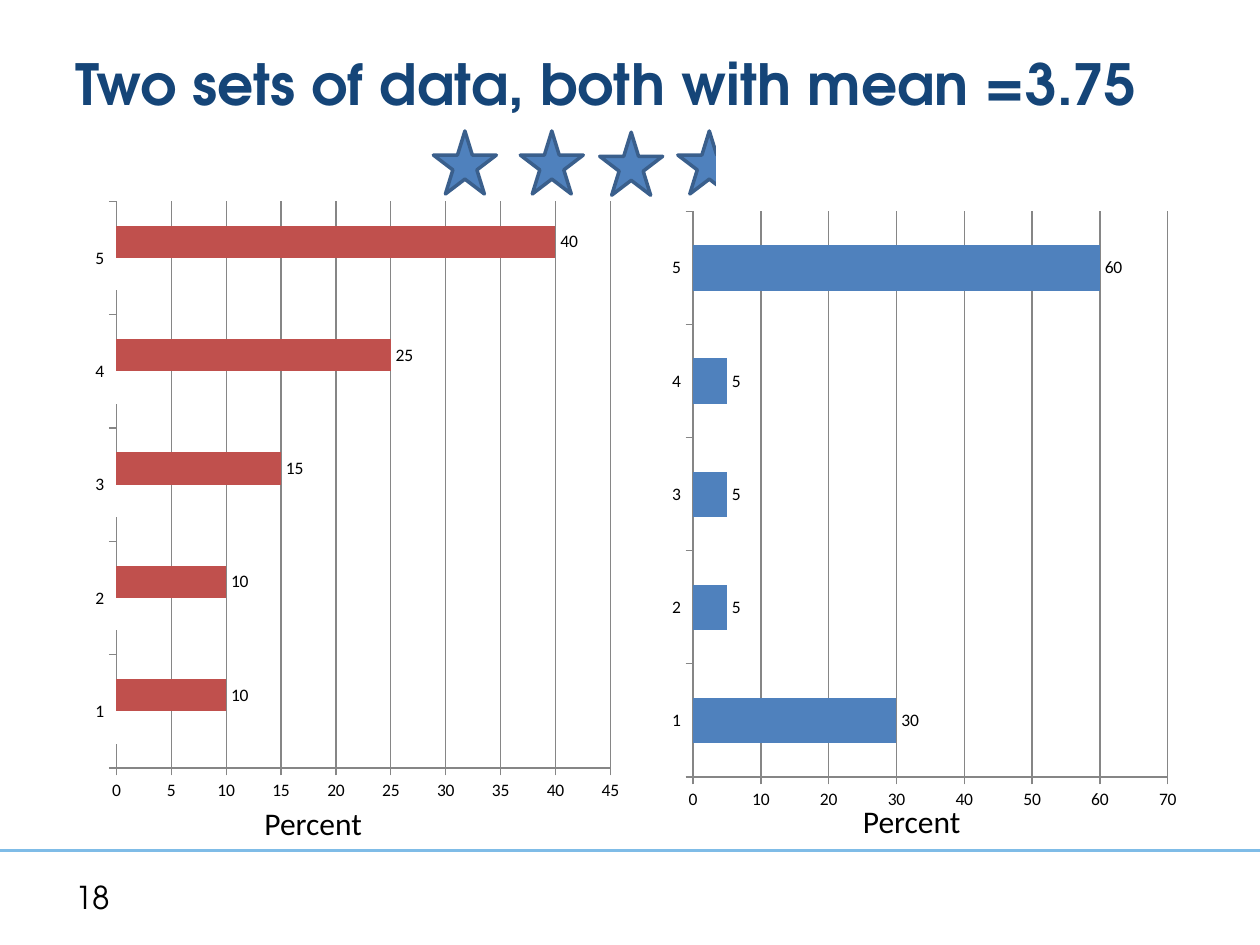
from dataclasses import dataclass

from lxml import etree
from pptx import Presentation
from pptx.chart.data import CategoryChartData
from pptx.dml.color import RGBColor
from pptx.enum import chart as ch, shapes as shp, text as txt
from pptx.oxml.ns import qn
from pptx.util import Inches, Pt

BLACK, WHITE, GRAY = "000000", "FFFFFF", "868686"
NAVY, SKY, BLUE, RED = "154578", "7FBCE7", "4F81BD", "C0504D"
STAR_EDGE = "3A5F8C"
HEADING, BODY = "TeX Gyre Adventor", "Calibri"


@dataclass
class Series:
    name: str
    values: tuple
    color: str
    labelled: bool = True


@dataclass
class RatingChart:
    box: tuple
    maximum: int
    step: int
    series: list


def rgb(color: str) -> RGBColor:
    return RGBColor.from_string(color)


def style_font(font, size: float, name: str = BODY, color: str = BLACK, bold: bool = False):
    font.size, font.name, font.bold = Pt(size), name, bold
    font.color.rgb = rgb(color)


def write(shape, text: str, *, size=18, name=BODY, color=BLACK, bold=False,
          anchor=txt.MSO_ANCHOR.TOP, bottom=0.05):
    frame = shape.text_frame
    frame.word_wrap = True
    frame.auto_size = txt.MSO_AUTO_SIZE.NONE
    frame.vertical_anchor = anchor
    frame.margin_bottom = Inches(bottom)
    paragraph = frame.paragraphs[0]
    paragraph.alignment = txt.PP_ALIGN.LEFT
    run = paragraph.add_run()
    run.text = text
    style_font(run.font, size, name, color, bold)


def add_label(slide, box: tuple, text: str, **style):
    write(slide.shapes.add_textbox(*map(Inches, box)), text, **style)


def add_block(slide, kind, left: float, top: float, fill: str, edge: str):
    block = slide.shapes.add_shape(kind, *map(Inches, (left, top, 0.5, 0.5)))
    block.shadow.inherit = False
    block.fill.solid()
    block.fill.fore_color.rgb = rgb(fill)
    block.line.color.rgb = rgb(edge)
    block.line.width = Pt(2)


def style_line(line):
    line.color.rgb = rgb(GRAY)
    line.width = Pt(0.75)


def add_rating_chart(slide, spec_: RatingChart):
    data = CategoryChartData()
    data.categories = ["1", "2", "3", "4", "5"]
    for item in spec_.series:
        data.add_series(item.name, item.values)
    chart = slide.shapes.add_chart(
        ch.XL_CHART_TYPE.BAR_CLUSTERED, *map(Inches, spec_.box), data).chart
    chart.has_legend = chart.has_title = False
    style_font(chart.font, 10)

    percent_axis = chart.value_axis
    percent_axis.minimum_scale, percent_axis.maximum_scale = 0, spec_.maximum
    percent_axis.major_unit = spec_.step
    percent_axis.has_major_gridlines = True
    style_line(percent_axis.major_gridlines.format.line)
    for axis in (chart.category_axis, percent_axis):
        axis.major_tick_mark = ch.XL_TICK_MARK.OUTSIDE
        style_line(axis.format.line)

    plot = chart.plots[0]
    plot.gap_width = 150
    plot.vary_by_categories = False
    for bars, item in zip(plot.series, spec_.series):
        bars.format.fill.solid()
        bars.format.fill.fore_color.rgb = rgb(item.color)
        bars.invert_if_negative = False
        if item.labelled:
            labels = bars.data_labels
            labels.show_value = True
            labels.position = ch.XL_LABEL_POSITION.OUTSIDE_END
            style_font(labels.font, 10)


def main():
    deck = Presentation()
    deck.slide_width, deck.slide_height = Inches(10), Inches(7.5)
    slide = deck.slides.add_slide(deck.slide_layouts[5])

    # Footer rule
    rule = slide.shapes.add_connector(
        shp.MSO_CONNECTOR.STRAIGHT, *map(Inches, (0, 6.75, 10, 6.75)))
    rule.line.color.rgb = rgb(SKY)
    rule.line.width = Pt(1.5)
    etree.SubElement(rule.line._get_or_add_ln().getparent(), qn("a:effectLst"))

    # Title, raised above the stars by its bottom margin
    title = slide.shapes.title
    title.left, title.top, title.width, title.height = map(Inches, (0.5, 0.3, 9, 1.25))
    write(title, "Two sets of data, both with mean =3.75", size=32.4, name=HEADING,
          color=NAVY, bold=True, anchor=txt.MSO_ANCHOR.MIDDLE, bottom=0.58)

    # Page number
    add_label(slide, (0.5, 6.92, 2.33, 0.4), "18", name=HEADING,
              anchor=txt.MSO_ANCHOR.MIDDLE)

    # Two distributions with the same mean; white bars leave the lower half blank
    spread = RatingChart((0.67, 1.5, 4.33, 4.95), 45, 5, [
        Series("Series 1", (5, 4, 3, 2, 1), WHITE, labelled=False),
        Series("Series 2", (10, 10, 15, 25, 40), RED)])
    polarised = RatingChart((5.25, 1.58, 4.17, 4.94), 70, 10, [
        Series("Series 1", (30, 5, 5, 5, 60), BLUE)])
    for rating_chart in (spread, polarised):
        add_rating_chart(slide, rating_chart)

    # Axis captions
    for left, top in ((2, 6.33), (6.75, 6.32)):
        add_label(slide, (left, top, 1.42, 0.4), "Percent")

    # Mean as stars, the last one cut by a white block
    for left, top in ((3.44, 1.04), (4.13, 1.04), (4.76, 1.05), (5.38, 1.04)):
        add_block(slide, shp.MSO_SHAPE.STAR_5_POINT, left, top, BLUE, STAR_EDGE)
    add_block(slide, shp.MSO_SHAPE.RECTANGLE, 5.7, 1.05, WHITE, WHITE)

    deck.save("out.pptx")


if __name__ == "__main__":
    main()
